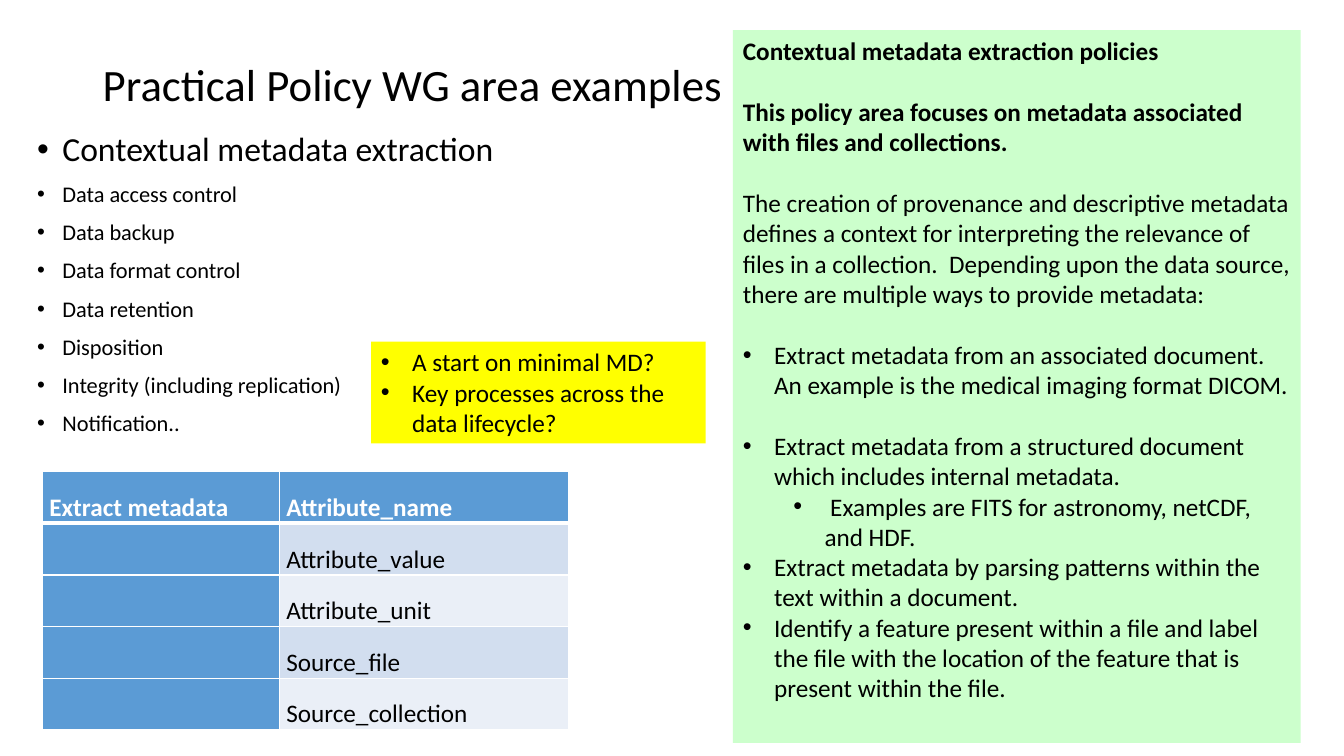
from lxml import etree
from pptx import Presentation
from pptx.dml.color import RGBColor
from pptx.enum import shapes, text
from pptx.oxml import ns
from pptx.util import Inches, Pt

POLICY_AREAS = [
    "Data access control",
    "Data backup",
    "Data format control",
    "Data retention",
    "Disposition",
    "Integrity (including replication)",
    "Notification..",
]
ATTRIBUTES = ["Attribute_name", "Attribute_value", "Attribute_unit",
              "Source_file", "Source_collection"]
LINE_GAP = 22


def color(value):
    return RGBColor.from_string(value)


def add_bullet(paragraph, margin, hang):
    props = paragraph._p.get_or_add_pPr()
    props.set("marL", str(Inches(margin)))
    props.set("indent", str(-Inches(hang)))
    etree.SubElement(props, ns.qn("a:buFont"), typeface="Arial")
    etree.SubElement(props, ns.qn("a:buChar"), char="•")


def style_font(paragraph, size=18, bold=False, hex_color="000000"):
    font = paragraph.font
    font.name = "Calibri"
    font.size = Pt(size)
    font.bold = bold
    font.color.rgb = color(hex_color)


def write_paragraph(frame, content, size=18, bold=False, margin=None,
                    hang=0.31, before=0, spacing=1.0):
    first = frame.paragraphs[0]
    paragraph = frame.add_paragraph() if first.runs else first
    paragraph.text = content
    paragraph.alignment = text.PP_ALIGN.LEFT
    paragraph.line_spacing = spacing
    paragraph.space_before = Pt(before)
    if margin is not None:
        add_bullet(paragraph, margin, hang)
    style_font(paragraph, size, bold)


def add_text_area(slide, left, top, width, height, anchor=text.MSO_ANCHOR.TOP):
    area = slide.shapes.add_textbox(
        Inches(left), Inches(top), Inches(width), Inches(height))
    frame = area.text_frame
    frame.word_wrap = True
    frame.vertical_anchor = anchor
    return frame


def add_panel(slide, left, top, width, height, fill):
    panel = slide.shapes.add_shape(
        shapes.MSO_SHAPE.RECTANGLE,
        Inches(left), Inches(top), Inches(width), Inches(height))
    panel.shadow.inherit = False
    panel.fill.solid()
    panel.fill.fore_color.rgb = color(fill)
    panel.line.fill.background()
    frame = panel.text_frame
    frame.word_wrap = True
    frame.vertical_anchor = text.MSO_ANCHOR.TOP
    return frame


def add_border(cell, side, width):
    props = cell._tc.get_or_add_tcPr()
    line = etree.SubElement(props, ns.qn(f"a:{side}"), w=str(Pt(width)))
    fill = etree.SubElement(line, ns.qn("a:solidFill"))
    etree.SubElement(fill, ns.qn("a:srgbClr"), val="FFFFFF")


def fill_cell(cell, content, fill, header):
    for side in ("lnL", "lnR", "lnT", "lnB"):
        add_border(cell, side, 3 if header and side == "lnB" else 1)
    cell.fill.solid()
    cell.fill.fore_color.rgb = color(fill)
    cell.vertical_anchor = text.MSO_ANCHOR.BOTTOM
    cell.margin_left = cell.margin_right = Inches(0.07)
    cell.margin_top = cell.margin_bottom = 0
    cell.text = content
    style_font(cell.text_frame.paragraphs[0], bold=header,
               hex_color="FFFFFF" if header else "000000")


def add_attribute_table(slide):
    table = slide.shapes.add_table(
        len(ATTRIBUTES), 2, Inches(0.42), Inches(4.68),
        Inches(5.22), Inches(2.56)).table
    table.columns[0].width = Inches(2.35)
    table.columns[1].width = Inches(2.87)
    for index, attribute in enumerate(ATTRIBUTES):
        header = index == 0
        band = "5B9BD5" if header else ("EAEFF7", "D2DEEF")[index % 2]
        label = "Extract metadata" if header else ""
        fill_cell(table.cell(index, 0), label, "5B9BD5", header)
        fill_cell(table.cell(index, 1), attribute, band, header)


def add_policy_areas(slide):
    areas = add_text_area(slide, 0.27, 1.27, 5.52, 3.16)
    bullet = dict(margin=0.25, hang=0.25, before=10, spacing=0.9)
    write_paragraph(areas, "Contextual metadata extraction", 24, **bullet)
    for area in POLICY_AREAS:
        write_paragraph(areas, area, 16, **bullet)


def add_policy_details(slide):
    details = add_panel(slide, 7.27, 0.3, 5.63, 7.07, "CCFFCC")
    write_paragraph(details, "Contextual metadata extraction policies", bold=True)
    write_paragraph(details, "This policy area focuses on metadata associated "
                    "with files and collections.", bold=True, before=LINE_GAP)
    write_paragraph(details, "The creation of provenance and descriptive metadata "
                    "defines a context for interpreting the relevance of files in "
                    "a collection.  Depending upon the data source, there are "
                    "multiple ways to provide metadata:", before=LINE_GAP)
    methods = [
        ("Extract metadata from an associated document.  An example is the "
         "medical imaging format DICOM.", 0.31, LINE_GAP),
        ("Extract metadata from a structured document which includes internal "
         "metadata.", 0.31, LINE_GAP),
        (" Examples are FITS for astronomy, netCDF, and HDF.", 0.81, 0),
        ("Extract metadata by parsing patterns within the text within a "
         "document.", 0.31, 0),
        ("Identify a feature present within a file and label the file with the "
         "location of the feature that is present within the file.", 0.31, 0),
    ]
    for method, margin, before in methods:
        write_paragraph(details, method, margin=margin, before=before)


def add_questions(slide):
    questions = add_panel(slide, 3.68, 3.39, 3.32, 1.01, "FFFF00")
    for question in ("A start on minimal MD?",
                     "Key processes across the data lifecycle?"):
        write_paragraph(questions, question, margin=0.31)


def main():
    deck = Presentation()
    deck.slide_width = Inches(13.33)
    deck.slide_height = Inches(7.5)
    slide = deck.slides.add_slide(deck.slide_layouts[6])
    title = add_text_area(slide, 0.92, 0.3, 11.5, 1.13, text.MSO_ANCHOR.MIDDLE)
    write_paragraph(title, "Practical Policy WG area examples", 32, spacing=0.9)
    add_policy_areas(slide)
    add_policy_details(slide)
    add_attribute_table(slide)
    add_questions(slide)
    deck.save("out.pptx")


if __name__ == "__main__":
    main()
